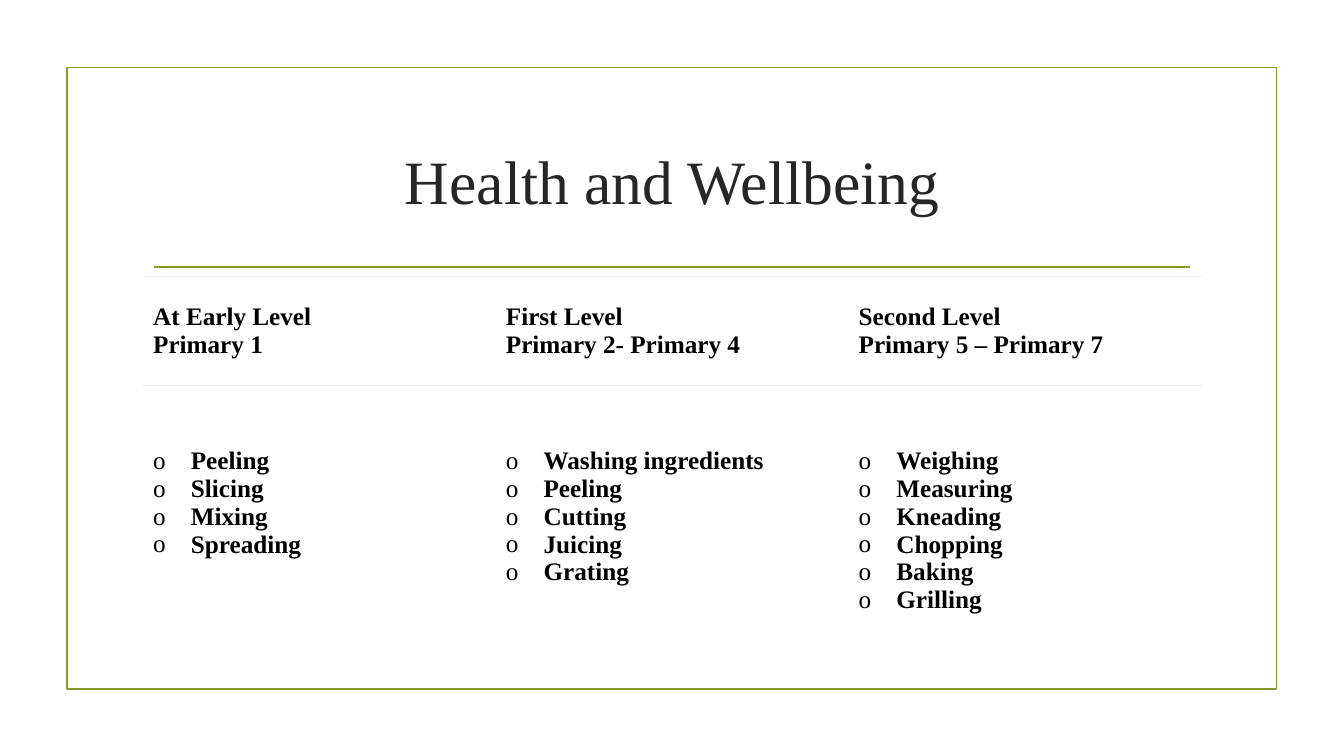
"""Build the Health and Wellbeing slide of food skills by school level."""
from lxml.etree import SubElement
from pptx import Presentation
from pptx.dml.color import RGBColor
from pptx.enum.shapes import MSO_CONNECTOR, MSO_SHAPE
from pptx.enum.text import MSO_ANCHOR, PP_ALIGN
from pptx.oxml import parse_xml
from pptx.oxml.ns import nsdecls, qn
from pptx.util import Cm, Pt

COLORS = {"accent": "83992A", "title": "262626", "text": "000000", "rule": "EDEDED"}
FONT = "Times New Roman"
LEVELS = [
    (["At Early Level", "Primary 1"],
     ["Peeling", "Slicing", "Mixing", "Spreading"]),
    (["First Level", "Primary 2- Primary 4"],
     ["Washing ingredients", "Peeling", "Cutting", "Juicing", "Grating"]),
    (["Second Level", "Primary 5 – Primary 7"],
     ["Weighing", "Measuring", "Kneading", "Chopping", "Baking", "Grilling"]),
]


def style_font(font, size, color, bold=False):
    font.name = FONT
    font.size = Pt(size)
    font.bold = bold
    font.color.rgb = RGBColor.from_string(COLORS[color])


def fill_cell(cell, lines, borders, bulleted):
    cell.fill.background()
    for position, side in enumerate(borders):
        cell._tc.get_or_add_tcPr().insert(position, parse_xml(
            f'<a:{side} {nsdecls("a")} w="9525"><a:solidFill>'
            f'<a:srgbClr val="{COLORS["rule"]}"/></a:solidFill></a:{side}>'))
    cell.margin_left = cell.margin_right = Cm(0.25)
    cell.margin_top = Cm(1.55) if bulleted else Cm(0.15)
    cell.margin_bottom = Cm(0.15)
    cell.vertical_anchor = MSO_ANCHOR.TOP if bulleted else MSO_ANCHOR.MIDDLE
    cell.text_frame.text = "\n".join(lines)
    for paragraph in cell.text_frame.paragraphs:
        if bulleted:
            properties = paragraph._p.get_or_add_pPr()
            properties.set("marL", str(Cm(0.95)))
            properties.set("indent", str(-Cm(0.95)))
            SubElement(properties, qn("a:buFont")).set("typeface", FONT)
            SubElement(properties, qn("a:buChar")).set("char", "o")
        for run in paragraph.runs:
            style_font(run.font, 18, "text", bold=True)


prs = Presentation()
prs.slide_width, prs.slide_height = Cm(33.87), Cm(19.05)
slide = prs.slides.add_slide(prs.slide_layouts[6])

frame = slide.shapes.add_shape(
    MSO_SHAPE.RECTANGLE, Cm(1.69), Cm(1.7), Cm(30.48), Cm(15.67))
frame.shadow.inherit = False
frame.fill.background()

divider = slide.shapes.add_connector(
    MSO_CONNECTOR.STRAIGHT, Cm(3.89), Cm(6.73), Cm(30), Cm(6.73))
SubElement(divider._element.spPr, qn("a:effectLst"))
for outline in (frame.line, divider.line):
    outline.color.rgb = RGBColor.from_string(COLORS["accent"])
    outline.width = Pt(1.25)

title = slide.shapes.add_textbox(Cm(3.61), Cm(2.72), Cm(26.67), Cm(3.63))
title.text_frame.word_wrap = True
title.text_frame.vertical_anchor = MSO_ANCHOR.MIDDLE
title.text_frame.text = "Health and Wellbeing"
heading = title.text_frame.paragraphs[0]
heading.alignment = PP_ALIGN.CENTER
style_font(heading.runs[0].font, 44, "title")

skills_table = slide.shapes.add_table(
    2, len(LEVELS), Cm(3.61), Cm(6.97), Cm(26.67), Cm(10.03)).table
skills_table.first_row = skills_table.horz_banding = False
skills_table.rows[0].height = Cm(2.74)
skills_table.rows[1].height = Cm(7.29)
for column, (level, skills) in enumerate(LEVELS):
    skills_table.columns[column].width = Cm(8.89)
    fill_cell(skills_table.cell(0, column), level, ["lnT", "lnB"], bulleted=False)
    fill_cell(skills_table.cell(1, column), skills, ["lnT"], bulleted=True)

prs.save("out.pptx")
